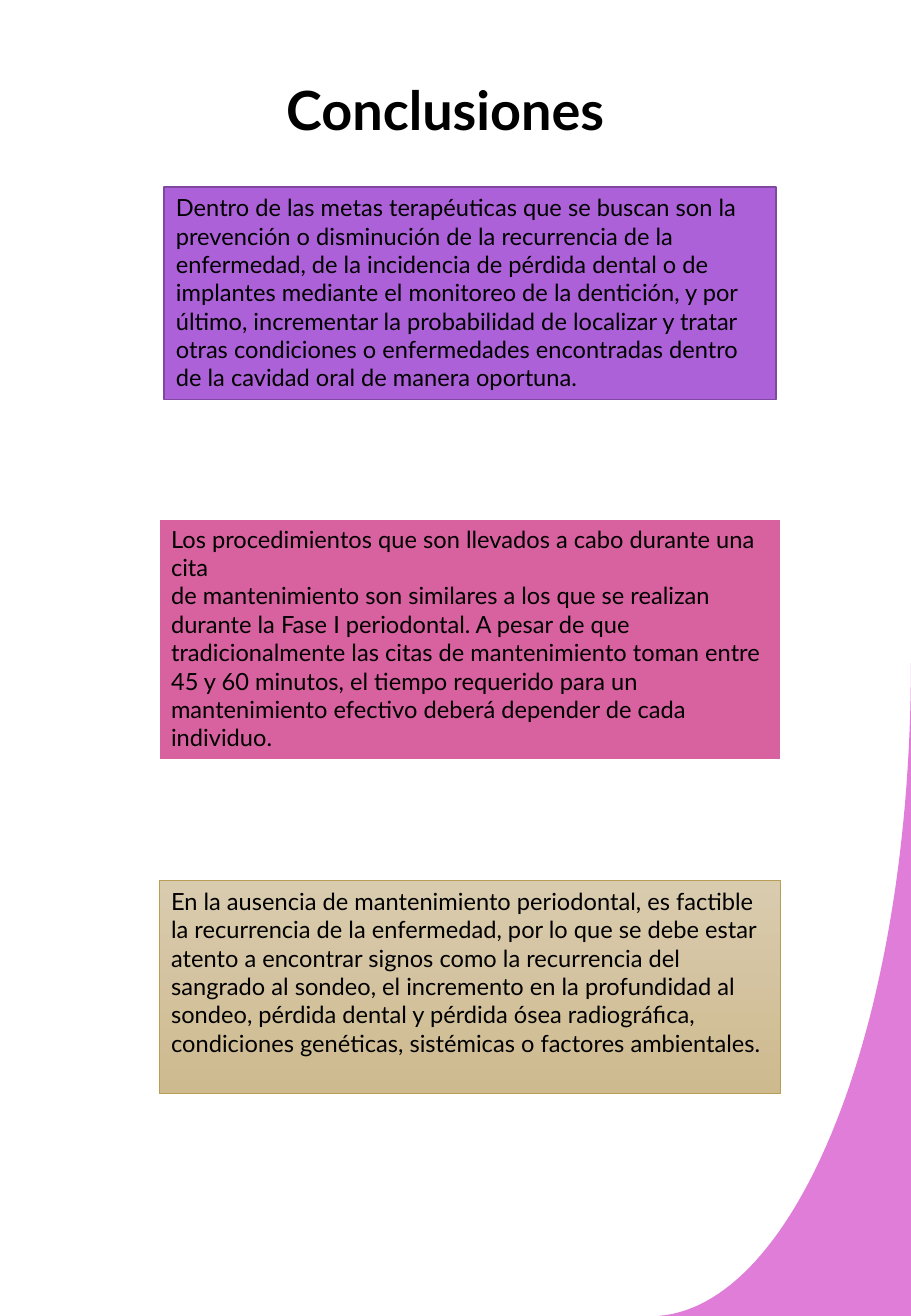
from dataclasses import dataclass

from pptx import Presentation
from pptx.dml.color import RGBColor
from pptx.enum.shapes import MSO_SHAPE as Shape
from pptx.enum.text import MSO_ANCHOR as Anchor, PP_ALIGN as Align
from pptx.util import Pt


@dataclass(frozen=True)
class Theme:
    font: str = "Lato"
    title_size: int = 32
    body_size: int = 14
    ink: str = "000000"
    swoosh: str = "DF7DD9"
    purple: str = "AD61D8"
    purple_edge: str = "8048A0"
    pink: str = "D8619F"
    pink_edge: str = "FFFFFF"
    sand: tuple = ("D9CBAE", "CEBA8F")
    sand_edge: str = "B89D56"


class SlideBuilder:
    def __init__(self, page, theme):
        self.page = page
        self.theme = theme

    def paint(self, shape, fill, edge=None, weight=0):
        shape.shadow.inherit = False
        if isinstance(fill, tuple):
            shape.fill.gradient()
            shape.fill.gradient_angle = 270
            for stop, (position, color) in zip(shape.fill.gradient_stops, enumerate(fill)):
                stop.position = position
                stop.color.rgb = RGBColor.from_string(color)
        else:
            shape.fill.solid()
            shape.fill.fore_color.rgb = RGBColor.from_string(fill)
        if edge:
            shape.line.color.rgb = RGBColor.from_string(edge)
            shape.line.width = Pt(weight)
        else:
            shape.line.fill.background()

    def add_text(self, shape, paragraphs, size, align=Align.LEFT, bold=False):
        frame = shape.text_frame
        frame.word_wrap = True
        frame.vertical_anchor = Anchor.TOP
        font_format = {"name": self.theme.font, "size": Pt(size), "bold": bold}
        for index, text in enumerate(paragraphs):
            para = frame.add_paragraph() if index else frame.paragraphs[0]
            para.alignment = align
            span = para.add_run()
            span.text = text
            for name, value in font_format.items():
                setattr(span.font, name, value)
            span.font.color.rgb = RGBColor.from_string(self.theme.ink)

    def title(self, text, *bounds):
        box = self.page.shapes.add_textbox(*map(Pt, bounds))
        self.add_text(box, [text], self.theme.title_size, Align.CENTER, True)

    def panel(self, paragraphs, bounds, fill, edge, weight):
        box = self.page.shapes.add_shape(Shape.RECTANGLE, *map(Pt, bounds))
        self.paint(box, fill, edge, weight)
        self.add_text(box, paragraphs, self.theme.body_size)

    def swoosh(self, corner, curve, steps=60):
        points = []
        for step in range(steps + 1):
            t = step / steps
            weights = ((1 - t) ** 3, 3 * t * (1 - t) ** 2, 3 * t * t * (1 - t), t ** 3)
            points.append([Pt(sum(w * p[axis] for w, p in zip(weights, curve))) for axis in (0, 1)])
        builder = self.page.shapes.build_freeform(*map(Pt, corner))
        builder.add_line_segments(points, close=True)
        self.paint(builder.convert_to_shape(), self.theme.swoosh)


def main():
    deck = Presentation()
    deck.slide_width, deck.slide_height = Pt(540), Pt(780)
    theme = Theme()
    slide = SlideBuilder(deck.slides.add_slide(deck.slide_layouts[6]), theme)

    slide.swoosh((540, 780), [(390, 780), (472, 774), (540, 608), (540, 393)])
    slide.title("Conclusiones", 54, 41.8, 420, 46)

    goals = [
        "Dentro de las metas terapéuticas que se buscan son la prevención o disminución de la "
        "recurrencia de la enfermedad, de la incidencia de pérdida dental o de implantes mediante "
        "el monitoreo de la dentición, y por último, incrementar la probabilidad de localizar y "
        "tratar otras condiciones o enfermedades encontradas dentro de la cavidad oral de manera "
        "oportuna."
    ]
    procedures = [
        "Los procedimientos que son llevados a cabo durante una cita",
        "de mantenimiento son similares a los que se realizan durante la Fase I periodontal. A "
        "pesar de que tradicionalmente las citas de mantenimiento toman entre 45 y 60 minutos, el "
        "tiempo requerido para un mantenimiento efectivo deberá depender de cada individuo.",
    ]
    absence = [
        "En la ausencia de mantenimiento periodontal, es factible la recurrencia de la "
        "enfermedad, por lo que se debe estar atento a encontrar signos como la recurrencia del "
        "sangrado al sondeo, el incremento en la profundidad al sondeo, pérdida dental y pérdida "
        "ósea radiográfica, condiciones genéticas, sistémicas o factores ambientales."
    ]
    panels = [
        (goals, (97.2, 110.9, 362.9, 126), theme.purple, theme.purple_edge, 1),
        (procedures, (94.3, 307.4, 368.6, 143.3), theme.pink, theme.pink_edge, 1.5),
        (absence, (94.3, 522, 368.6, 126), theme.sand, theme.sand_edge, 0.5),
    ]
    for panel in panels:
        slide.panel(*panel)
    deck.save("out.pptx")


if __name__ == "__main__":
    main()
